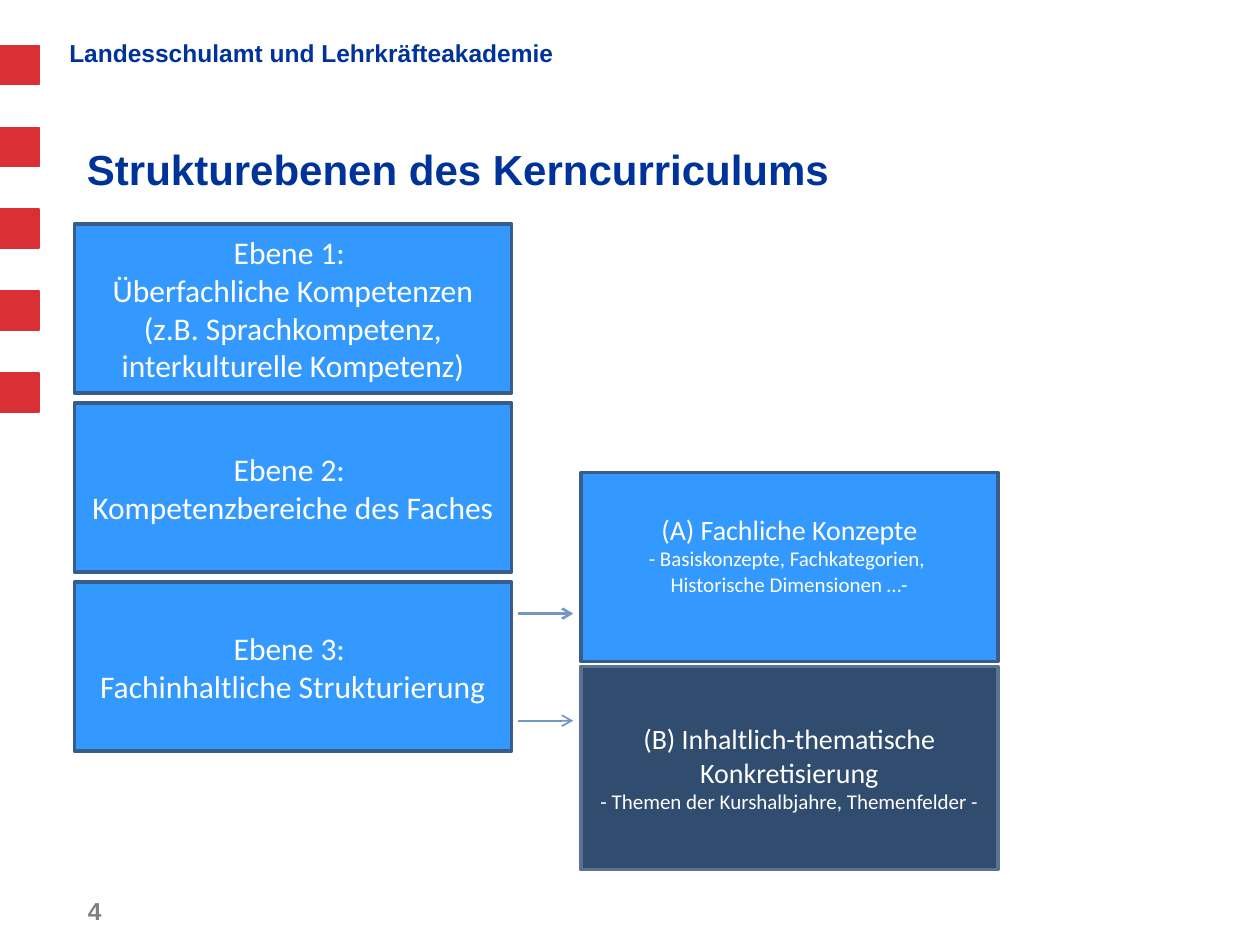
from lxml import etree
from pptx import Presentation
from pptx.dml.color import RGBColor
from pptx.enum.shapes import MSO_CONNECTOR, MSO_SHAPE
from pptx.enum.text import MSO_ANCHOR, MSO_AUTO_SIZE, PP_ALIGN
from pptx.oxml.ns import qn
from pptx.util import Inches, Pt

RECT = MSO_SHAPE.RECTANGLE
STRAIGHT = MSO_CONNECTOR.STRAIGHT
MIDDLE, BOTTOM = MSO_ANCHOR.MIDDLE, MSO_ANCHOR.BOTTOM
LEFT, CENTER = PP_ALIGN.LEFT, PP_ALIGN.CENTER
FIXED = MSO_AUTO_SIZE.NONE

RED = RGBColor(0xDB, 0x2F, 0x36)
NAVY = RGBColor(0x00, 0x33, 0x99)
BLUE = RGBColor(0x33, 0x99, 0xFF)
EDGE = RGBColor(0x38, 0x5D, 0x8A)
DARK = RGBColor(0x30, 0x4C, 0x6F)
DARK_EDGE = RGBColor(0x5A, 0x73, 0x92)
ARROW = RGBColor(0x74, 0x97, 0xC3)
GRAY = RGBColor(0x80, 0x80, 0x80)
WHITE = RGBColor(0xFF, 0xFF, 0xFF)

HEADER = "Landesschulamt und Lehrkräfteakademie"
TITLE = "Strukturebenen des Kerncurriculums"
PAGE = "4"
LEVELS = [
    ("Ebene 1: ", "Überfachliche Kompetenzen (z.B. Sprachkompetenz, "
                  "interkulturelle Kompetenz)"),
    ("Ebene 2: ", "Kompetenzbereiche des Faches"),
    ("Ebene 3: ", "Fachinhaltliche Strukturierung"),
]
# top, height, bottom inset, fill, edge, lines
PARTS = [
    (3.75, 1.5, 0.25, BLUE, EDGE,
     ["(A) Fachliche Konzepte", "- Basiskonzepte, Fachkategorien, ",
      "Historische Dimensionen …-"]),
    (5.29, 1.61, 0.05, DARK, DARK_EDGE,
     ["(B) Inhaltlich-thematische Konkretisierung",
      "- Themen der Kurshalbjahre, Themenfelder -"]),
]
ARROWS = [(4.87, 1.5), (5.72, 1)]  # height on slide, line width


def style(para, font, size, color, bold=False):
    for run in para.runs:
        run.font.name = font
        run.font.size = Pt(size)
        run.font.bold = bold
        run.font.color.rgb = color


def inset(frame, side, top, bottom):
    frame.margin_left = frame.margin_right = Inches(side)
    frame.margin_top, frame.margin_bottom = Inches(top), Inches(bottom)


def add_rect(slide, x, y, w, h, fill, edge, width):
    box = slide.shapes.add_shape(RECT, Inches(x), Inches(y),
                                 Inches(w), Inches(h))
    box.shadow.inherit = False
    box.fill.solid()
    box.fill.fore_color.rgb = fill
    box.line.color.rgb = edge
    box.line.width = Pt(width)
    return box


def fill_box(box, lines, head, rest, bottom=0.05):
    """Write centred lines, the first in size head, the others in size rest."""
    frame = box.text_frame
    frame.word_wrap = True
    frame.vertical_anchor = MIDDLE
    inset(frame, 0.1, 0.05, bottom)
    frame.text = "\n".join(lines)
    for i, para in enumerate(frame.paragraphs):
        para.alignment = CENTER
        style(para, "Calibri", rest if i else head, WHITE)


def add_label(slide, text, x, y, w, h, color):
    frame = slide.shapes.add_textbox(Inches(x), Inches(y),
                                     Inches(w), Inches(h)).text_frame
    frame.word_wrap = True
    frame.text = text
    style(frame.paragraphs[0], "Arial", 14, color, True)
    return frame


def add_arrow(slide, x, end, y, width):
    line = slide.shapes.add_connector(STRAIGHT, Inches(x), Inches(y),
                                      Inches(end), Inches(y))
    line.line.color.rgb = ARROW
    line.line.width = Pt(width)
    etree.SubElement(line.line._get_or_add_ln(), qn("a:tailEnd"), type="arrow")
    etree.SubElement(line._element.spPr, qn("a:effectLst"))


def add_title(slide):
    title = slide.shapes.title
    title.left, title.top = Inches(0.59), Inches(0.99)
    title.width, title.height = Inches(9.22), Inches(0.55)
    frame = title.text_frame
    frame.text = TITLE
    frame.auto_size = FIXED
    frame.vertical_anchor = BOTTOM
    inset(frame, 0.1, 0, 0)
    frame.paragraphs[0].alignment = LEFT
    style(frame.paragraphs[0], "Arial", 24, NAVY, True)


def main():
    prs = Presentation()
    prs.slide_width, prs.slide_height = Inches(10), Inches(7.5)
    slide = prs.slides.add_slide(prs.slide_layouts[5])

    for i in range(5):
        add_rect(slide, 0, 0.36 + i * 0.65, 0.31, 0.31, RED, RED, 0.75)
    header = add_label(slide, HEADER, 0.55, 0.28, 8.03, 0.31, NAVY)
    inset(header, 0, 0.05, 0.05)
    header.paragraphs[0].line_spacing = 0.9
    add_title(slide)

    for i, lines in enumerate(LEVELS):
        box = add_rect(slide, 0.59, 1.78 + i * 1.42, 3.47, 1.34, BLUE, EDGE, 2)
        fill_box(box, lines, 18, 18)
    for top, high, bottom, fill, edge, lines in PARTS:
        box = add_rect(slide, 4.61, top, 3.31, high, fill, edge, 2)
        fill_box(box, lines, 16, 12, bottom)

    add_label(slide, PAGE, 0.6, 7.06, 0.77, 0.33, GRAY)
    for y, width in ARROWS:
        add_arrow(slide, 4.11, 4.55, y, width)
    prs.save("out.pptx")


if __name__ == "__main__":
    main()
